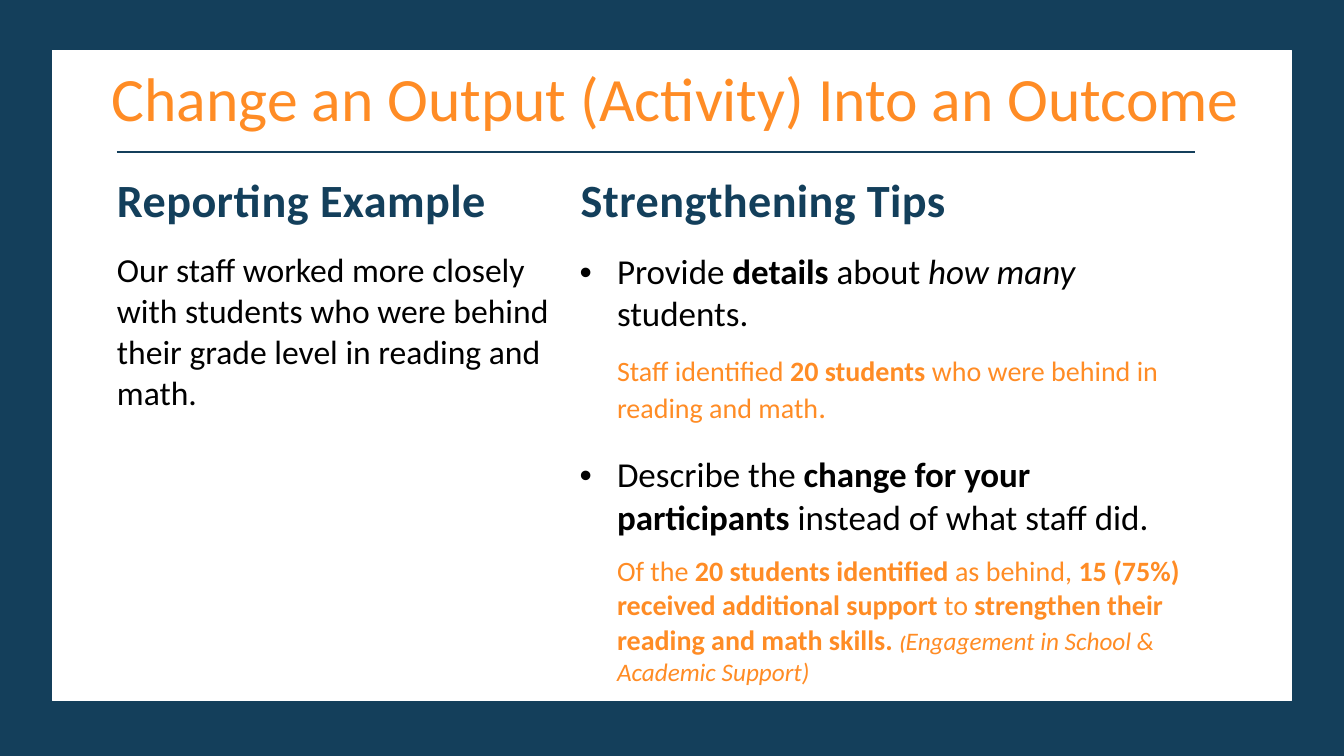
from lxml import etree
from pptx import Presentation
from pptx.dml.color import RGBColor
from pptx.enum.shapes import MSO_SHAPE
from pptx.enum.text import MSO_ANCHOR, MSO_AUTO_SIZE
from pptx.oxml.ns import qn
from pptx.util import Inches, Pt

RECT = MSO_SHAPE.RECTANGLE
MIDDLE, TOP = MSO_ANCHOR.MIDDLE, MSO_ANCHOR.TOP
GROW = MSO_AUTO_SIZE.SHAPE_TO_FIT_TEXT
NAVY = RGBColor(0x14, 0x3F, 0x5B)
HEAD = RGBColor(0x13, 0x3F, 0x5B)
ORANGE = RGBColor(0xFF, 0x8C, 0x25)
BLACK = RGBColor(0, 0, 0)
WHITE = RGBColor(255, 255, 255)


def add_runs(para, size, color, runs):
    """Add (text, style, size) runs; style holds b or i, the last two are optional."""
    for text, style, own in [(*run, "", None)[:3] if len(run) < 3 else run for run in runs]:
        run = para.add_run()
        run.text = text
        font = run.font
        font.name, font.size = "Calibri", Pt(own or size)
        font.bold, font.italic = "b" in style, "i" in style
        font.color.rgb = color


def set_cell(cell, right, anchor, rule):
    """Set the margins, borders (a top rule or none) and empty fill of a cell."""
    cell.margin_left = cell.margin_top = cell.margin_bottom = 0
    cell.margin_right = Inches(right)
    cell.vertical_anchor = anchor
    props = cell._tc.get_or_add_tcPr()
    for side in "LRTB":
        line = etree.SubElement(props, qn(f"a:ln{side}"))
        if rule and side == "T":
            line.set("w", str(Pt(1.5)))
            fill = etree.SubElement(line, qn("a:solidFill"))
            etree.SubElement(fill, qn("a:srgbClr")).set("val", str(NAVY))
        else:
            etree.SubElement(line, qn("a:noFill"))
    cell.fill.background()


deck = Presentation()
deck.slide_width, deck.slide_height = Inches(13.33), Inches(7.5)
slide = deck.slides.add_slide(deck.slide_layouts[6])

# Navy frame and white panel
for box, color in (((0, 0, 13.33, 7.5), NAVY), ((0.52, 0.5, 12.29, 6.45), WHITE)):
    panel = slide.shapes.add_shape(RECT, *map(Inches, box))
    panel.shadow.inherit = False
    panel.fill.solid()
    panel.fill.fore_color.rgb = color
    panel.line.fill.background()
panel.line.color.rgb = WHITE
panel.line.width = Pt(0.85)

# Table of example and tips
frame = slide.shapes.add_table(2, 2, Inches(1.16), Inches(1.51), Inches(10.69), Inches(4.36))
table = frame.table
table.first_row = table.horz_banding = False
for col, width in zip(table.columns, (4.46, 6.23)):
    col.width = Inches(width)
for row, height in zip(table.rows, (0.98, 3.38)):
    row.height = Inches(height)
frame.height = Inches(5.72)

for col, (title, indent) in enumerate((("Reporting Example", 0), ("Strengthening Tips", 0.14))):
    set_cell(table.cell(0, col), 0.02, MIDDLE, True)
    set_cell(table.cell(1, col), 0.14, TOP, False)
    para = table.cell(0, col).text_frame.paragraphs[0]
    add_runs(para, 33, HEAD, [(title, "b")])
    para._p.get_or_add_pPr().set("marL", str(Inches(indent)))
    para.runs[0]._r.get_or_add_rPr().set("spc", "30")

example = table.cell(1, 0).text_frame.paragraphs[0]
add_runs(example, 24, BLACK, [(
    "Our staff worked more closely with students who were behind "
    "their grade level in reading and math.",)])

# Each tip: bullet, space before, size, colour, runs
tips = (
    (True, 0, 25, BLACK, [
        ("Provide ",), ("details", "b"), (" about ",), ("how many ", "i"), ("students.",)]),
    (False, 13.4, 20, ORANGE, [
        ("Staff identified ",), ("20 students ", "b"),
        ("who were behind in reading and math",), (".", "", 22)]),
    (True, 19.5, 25, BLACK, [
        ("Describe the ",), ("change for your participants ", "b"),
        ("instead of what staff did.",)]),
    (False, 11, 20, ORANGE, [
        ("Of the ",), ("20 students identified ", "b"), ("as behind, ",),
        ("15 (75%) received additional support ", "b"), ("to ",),
        ("strengthen their reading and math skills. ", "b"), ("(", "bi", 14),
        ("Engagement in School & Academic Support)", "i", 18)]),
)
body = table.cell(1, 1).text_frame
for place, (bullet, gap, size, color, runs) in enumerate(tips):
    para = body.add_paragraph() if place else body.paragraphs[0]
    if gap:
        para.space_before = Pt(gap)
    props = para._p.get_or_add_pPr()
    props.set("marL", str(Inches(0.5)))
    if bullet:
        props.set("indent", str(Inches(-0.37)))
        etree.SubElement(props, qn("a:buFont")).set("typeface", "Arial")
        etree.SubElement(props, qn("a:buChar")).set("char", "•")
    add_runs(para, size, color, runs)

# Slide title
title = slide.shapes.add_textbox(Inches(1.01), Inches(0.55), Inches(11.8), Inches(0.84))
title.text_frame.word_wrap = True
title.text_frame.auto_size = GROW
add_runs(title.text_frame.paragraphs[0], 44, ORANGE, [
    ("Change an Output (Activity) Into an Outcome",)])

deck.save("out.pptx")
